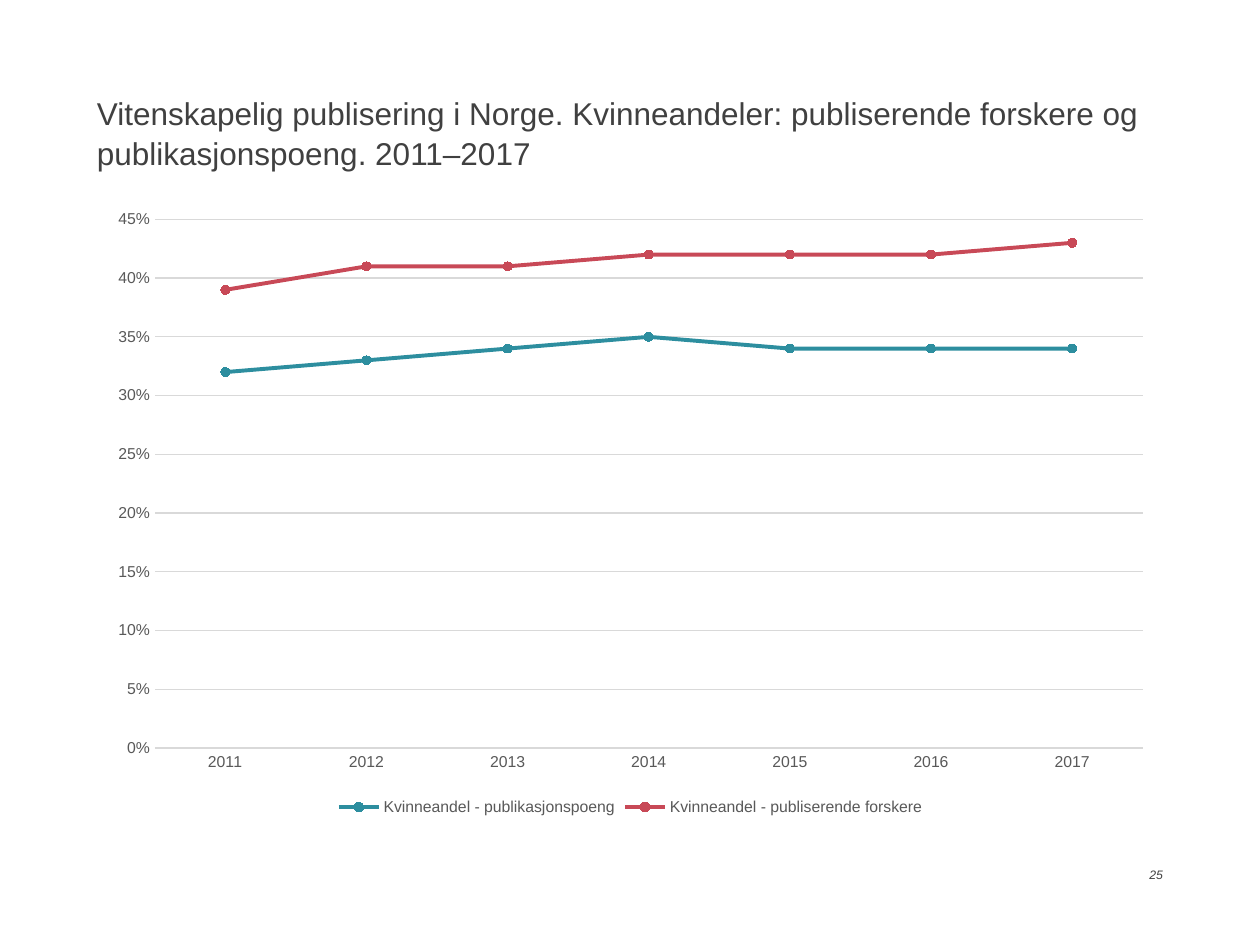
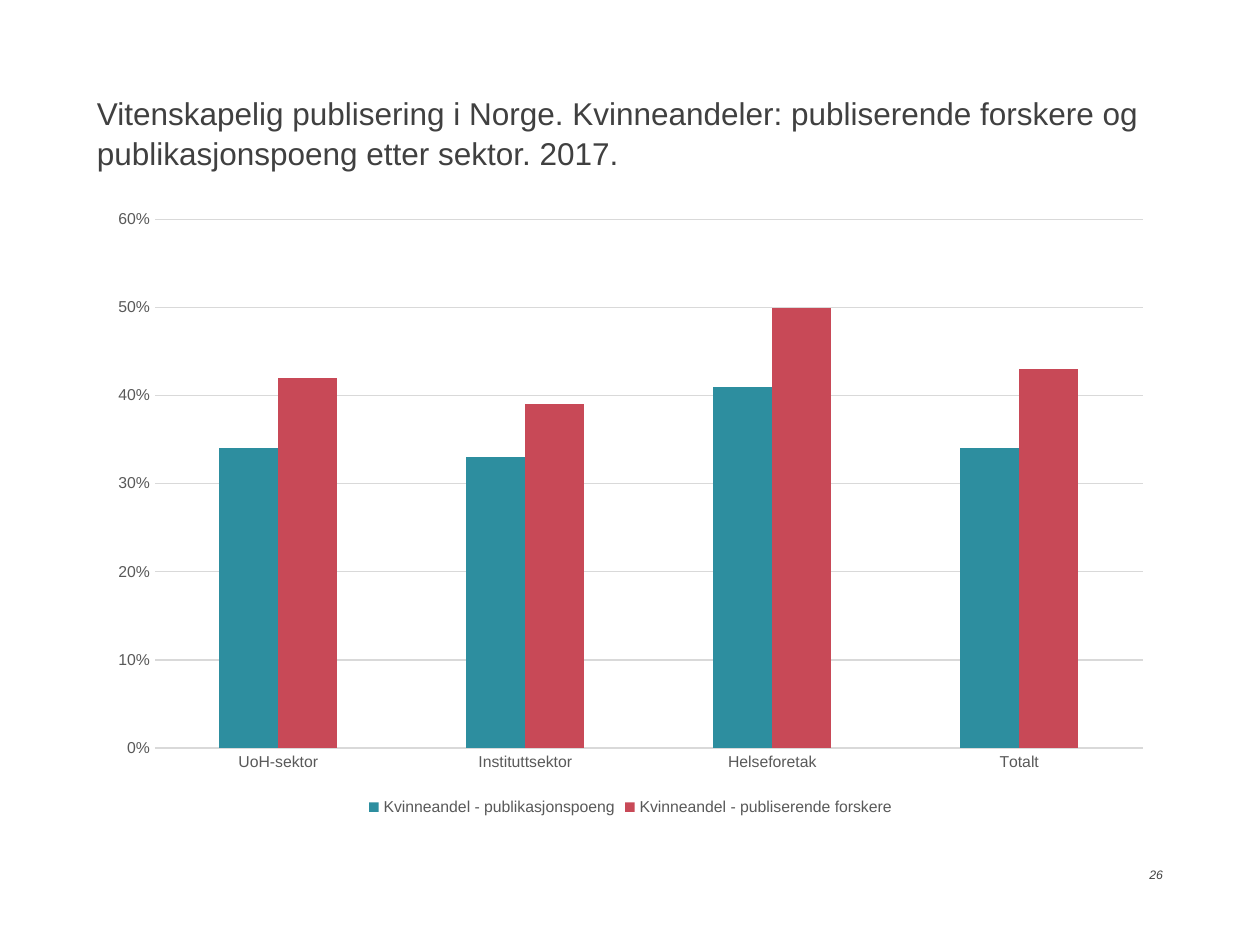
from dataclasses import dataclass
from pptx import Presentation
from pptx.chart.data import CategoryChartData as Data
from pptx.dml.color import RGBColor as Color
from pptx.enum.chart import XL_CHART_TYPE as Kind
from pptx.enum.chart import XL_LEGEND_POSITION as Place
from pptx.enum.chart import XL_MARKER_STYLE as Mark
from pptx.enum.chart import XL_TICK_MARK as Tick
from pptx.enum.text import MSO_ANCHOR as Anchor
from pptx.enum.text import MSO_AUTO_SIZE as Fit
from pptx.enum.text import PP_ALIGN as Align
from pptx.util import Pt


@dataclass(frozen=True)
class Theme:
    face: str = "Arial"
    ink: str = "404040"
    label: str = "595959"
    grid: str = "D9D9D9"
    points: str = "2D8E9F"
    people: str = "C84957"
    head: float = 18
    axis: float = 9
    foot: float = 7
    rule: float = 0.75
    trend: float = 2.25


THEME = Theme()
WIDE, HIGH = 720, 540
HEAD = (55.4, 52.6, 609.1, 28.8)
PLOT = (55.4, 113, 609.8, 356.4)
FOOT = (637.9, 495.4, 26.6, 8.6)
LEAD = "Vitenskapelig publisering i Norge. Kvinneandeler: publiserende forskere og publikasjonspoeng"
SERIES = (
    ("Kvinneandel - publikasjonspoeng", THEME.points),
    ("Kvinneandel - publiserende forskere", THEME.people),
)


def style(font, size, color, italic=None):
    font.name = THEME.face
    font.size = Pt(size)
    font.color.rgb = Color.from_string(color)
    font.italic = italic


def stroke(line, color, width):
    line.color.rgb = Color.from_string(color)
    line.width = Pt(width)


def write(shape, text, size=THEME.head, color=THEME.ink, italic=None,
          align=Align.LEFT, anchor=Anchor.TOP, space=None, fit=Fit.NONE):
    frame = shape.text_frame
    frame.word_wrap = True
    frame.auto_size = fit
    frame.vertical_anchor = anchor
    frame.margin_left = frame.margin_right = Pt(0)
    frame.margin_top = frame.margin_bottom = Pt(0)
    para = frame.paragraphs[0]
    para.alignment = align
    para.line_spacing = space
    run = para.add_run()
    run.text = text
    style(run.font, size, color, italic)


def add_head(slide, box, text):
    title = slide.shapes.title
    title.left, title.top, title.width, title.height = map(Pt, box)
    write(title, text, space=1.05)


def add_foot(slide, box, number):
    note = slide.shapes.add_textbox(*map(Pt, box))
    write(note, str(number), size=THEME.foot, italic=True, align=Align.RIGHT,
          anchor=Anchor.MIDDLE, fit=Fit.SHAPE_TO_FIT_TEXT)


def dress_axes(chart, top, step):
    across, up = chart.category_axis, chart.value_axis
    for axis in (across, up):
        axis.major_tick_mark = axis.minor_tick_mark = Tick.NONE
        style(axis.tick_labels.font, THEME.axis, THEME.label)
    stroke(across.format.line, THEME.grid, THEME.rule)
    up.format.line.fill.background()
    up.has_major_gridlines = True
    stroke(up.major_gridlines.format.line, THEME.grid, THEME.rule)
    up.minimum_scale, up.maximum_scale, up.major_unit = 0, top, step
    up.tick_labels.number_format = "0%"
    up.tick_labels.number_format_is_linked = False


def paint_line(series, color):
    series.smooth = False
    stroke(series.format.line, color, THEME.trend)
    marker = series.marker
    marker.style, marker.size = Mark.CIRCLE, 5
    marker.format.fill.solid()
    marker.format.fill.fore_color.rgb = Color.from_string(color)
    stroke(marker.format.line, color, THEME.rule)


def paint_bar(series, color):
    series.format.fill.solid()
    series.format.fill.fore_color.rgb = Color.from_string(color)


def add_plot(slide, box, kind, cats, rows, top, step):
    data = Data(number_format="0%")
    data.categories = cats
    for (name, _), row in zip(SERIES, rows):
        data.add_series(name, row)
    chart = slide.shapes.add_chart(kind, *map(Pt, box), data).chart
    chart.has_title = False
    style(chart.font, THEME.axis, THEME.label)
    chart.has_legend = True
    chart.legend.position = Place.BOTTOM
    chart.legend.include_in_layout = False
    style(chart.legend.font, THEME.axis, THEME.label)
    dress_axes(chart, top, step)
    plot = chart.plots[0]
    plot.vary_by_categories = False
    paint = paint_line
    if kind == Kind.COLUMN_CLUSTERED:
        plot.gap_width, plot.overlap = 219, 0
        paint = paint_bar
    for series, (_, color) in zip(plot.series, SERIES):
        paint(series, color)


def add_page(deck, number, ending, **plot):
    slide = deck.slides.add_slide(deck.slide_layouts.get_by_name("Title Only"))
    add_head(slide, HEAD, LEAD + ending)
    add_foot(slide, FOOT, number)
    add_plot(slide, PLOT, **plot)


def main():
    deck = Presentation()
    deck.slide_width, deck.slide_height = Pt(WIDE), Pt(HIGH)
    add_page(
        deck, 25, ". 2011–2017", kind=Kind.LINE_MARKERS,
        cats=[str(year) for year in range(2011, 2018)],
        rows=((0.32, 0.33, 0.34, 0.35, 0.34, 0.34, 0.34),
              (0.39, 0.41, 0.41, 0.42, 0.42, 0.42, 0.43)),
        top=0.45, step=0.05,
    )
    add_page(
        deck, 26, " etter sektor. 2017.", kind=Kind.COLUMN_CLUSTERED,
        cats=("UoH-sektor", "Instituttsektor", "Helseforetak", "Totalt"),
        rows=((0.34, 0.33, 0.41, 0.34), (0.42, 0.39, 0.5, 0.43)),
        top=0.6, step=0.1,
    )
    deck.save("out.pptx")


if __name__ == "__main__":
    main()
